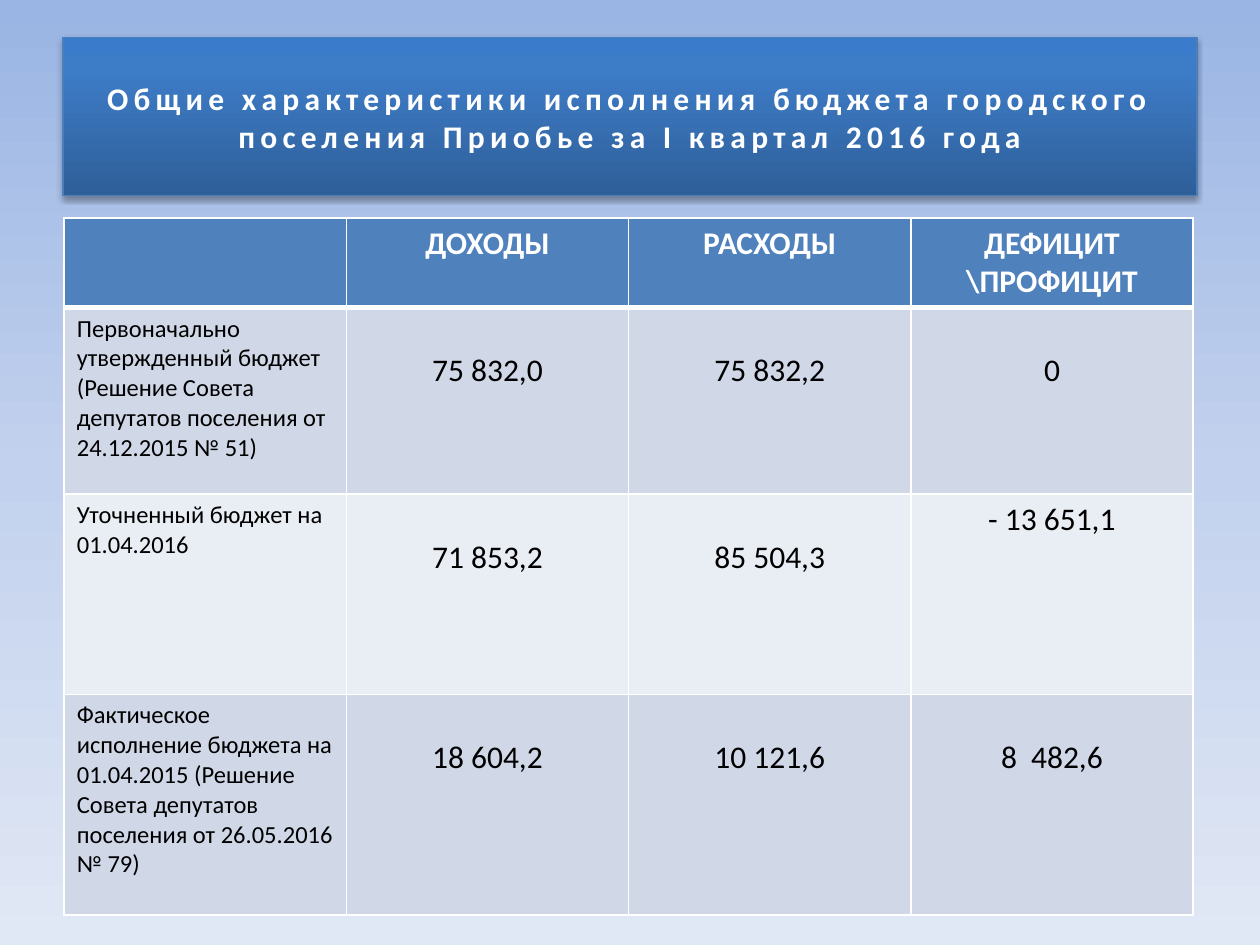
from lxml import etree
from pptx import Presentation
from pptx.dml.color import RGBColor
from pptx.enum.shapes import MSO_SHAPE
from pptx.enum.text import MSO_ANCHOR, PP_ALIGN
from pptx.oxml.ns import qn
from pptx.util import Inches, Pt

RECT = MSO_SHAPE.RECTANGLE
MIDDLE = MSO_ANCHOR.MIDDLE
LEFT, CENTER = PP_ALIGN.LEFT, PP_ALIGN.CENTER
WHITE = RGBColor(0xFF, 0xFF, 0xFF)
BLACK = RGBColor(0, 0, 0)
EDGE = RGBColor(0x4B, 0x7E, 0xBC)
HEADER = RGBColor(0x4F, 0x81, 0xBD)
BAND_DARK = RGBColor(0xD0, 0xD8, 0xE8)
BAND_LIGHT = RGBColor(0xE9, 0xED, 0xF4)
SKY = ((0, "9AB5E4"), (50, "C2D1ED"), (100, "E1E8F5"))
BANNER = ((0, "2F5F99"), (80, "3D7CC7"), (100, "3A7CCB"))

HEAD_TEXT = {"size": Pt(18), "bold": True, "color": WHITE}
LABEL_TEXT = {"size": Pt(14), "bold": False, "color": BLACK}
VALUE_TEXT = {"size": Pt(18), "bold": False, "color": BLACK}

TITLE = "Общие характеристики исполнения бюджета городского поселения Приобье за I квартал 2016 года"
ROWS = (
    ("", "ДОХОДЫ", "РАСХОДЫ", "ДЕФИЦИТ \\ПРОФИЦИТ"),
    ("Первоначально утвержденный бюджет (Решение Совета депутатов поселения от 24.12.2015 № 51)",
     "75 832,0", "75 832,2", "0"),
    ("Уточненный бюджет на 01.04.2016", "71 853,2", "85 504,3", "- 13 651,1"),
    ("Фактическое исполнение бюджета на 01.04.2015 (Решение Совета депутатов поселения от 26.05.2016 № 79)",
     "18 604,2", "10 121,6", "8  482,6"),
)
ROW_HEIGHTS = (0.7, 1.48, 1.59, 1.75)
COL_WIDTH = 2.24
TOP_CELL = (2, 3)


class Deck:
    """Holds the text style and the current slide, and draws each kind of element."""

    def __init__(self, slide, font="Calibri"):
        self.s = slide
        self.font = font

    def gradient(self, fill, element, stops, angle):
        fill.gradient()
        fill.gradient_angle = angle
        gs_list = element.find(".//" + qn("a:gsLst"))
        for gs in list(gs_list):
            gs_list.remove(gs)
        for pos, color in stops:
            gs = etree.SubElement(gs_list, qn("a:gs"), pos=str(pos * 1000))
            etree.SubElement(gs, qn("a:srgbClr"), val=color)

    def background(self, stops):
        self.gradient(self.s.background.fill, self.s.element, stops, 270)

    def text(self, tf, text, fmt, align):
        p = tf.paragraphs[0]
        p.alignment = align
        r = p.add_run()
        r.text = text
        r.font.name = self.font
        for key, value in fmt.items():
            if key == "color":
                r.font.color.rgb = value
            else:
                setattr(r.font, key, value)
        return r

    def banner(self, text, left, top, width, height):
        sp = self.s.shapes.add_shape(RECT, Inches(left), Inches(top), Inches(width), Inches(height))
        self.gradient(sp.fill, sp.element, BANNER, 90)
        sp.line.color.rgb = EDGE
        sp.line.width = Pt(0.75)
        sp.shadow.inherit = False
        effects = sp.element.spPr.find(qn("a:effectLst"))
        shadow = etree.SubElement(effects, qn("a:outerShdw"), blurRad=str(Pt(3.1)),
                                  dist=str(Pt(1.8)), dir="5400000", rotWithShape="0")
        color = etree.SubElement(shadow, qn("a:srgbClr"), val="000000")
        etree.SubElement(color, qn("a:alpha"), val="35000")
        tf = sp.text_frame
        tf.word_wrap = True
        tf.vertical_anchor = MIDDLE
        r = self.text(tf, text, HEAD_TEXT, CENTER)
        r.font._element.set("spc", "300")

    def borders(self, cell, **widths):
        tc_pr = cell._tc.get_or_add_tcPr()
        for side in "LRTB":
            ln = etree.SubElement(tc_pr, qn("a:ln" + side), w=str(Pt(widths.get(side, 1))))
            fill = etree.SubElement(ln, qn("a:solidFill"))
            etree.SubElement(fill, qn("a:srgbClr"), val=str(WHITE))

    def cell(self, cell, row, col, text):
        heavy = {0: {"B": 3}, 1: {"T": 3}}.get(row, {})
        self.borders(cell, **heavy)
        cell.fill.solid()
        cell.fill.fore_color.rgb = HEADER if row == 0 else BAND_DARK if row % 2 else BAND_LIGHT
        if row and col and (row, col) != TOP_CELL:
            cell.margin_top = Inches(0.35)
        if text:
            fmt = HEAD_TEXT if row == 0 else VALUE_TEXT if col else LABEL_TEXT
            self.text(cell.text_frame, text, fmt, CENTER if col or row == 0 else LEFT)

    def table(self, rows, left, top):
        n_cols = len(rows[0])
        frame = self.s.shapes.add_table(len(rows), n_cols, Inches(left), Inches(top),
                                        Inches(COL_WIDTH * n_cols), Inches(sum(ROW_HEIGHTS)))
        table = frame.table
        for column in table.columns:
            column.width = Inches(COL_WIDTH)
        for i, (height, texts) in enumerate(zip(ROW_HEIGHTS, rows)):
            table.rows[i].height = Inches(height)
            for j, text in enumerate(texts):
                self.cell(table.cell(i, j), i, j, text)


def main():
    prs = Presentation()
    prs.slide_width, prs.slide_height = Inches(10), Inches(7.5)
    deck = Deck(prs.slides.add_slide(prs.slide_layouts[6]))
    deck.background(SKY)
    deck.banner(TITLE, 0.5, 0.3, 9, 1.25)
    deck.table(ROWS, 0.51, 1.73)
    prs.save("out.pptx")


if __name__ == "__main__":
    main()
